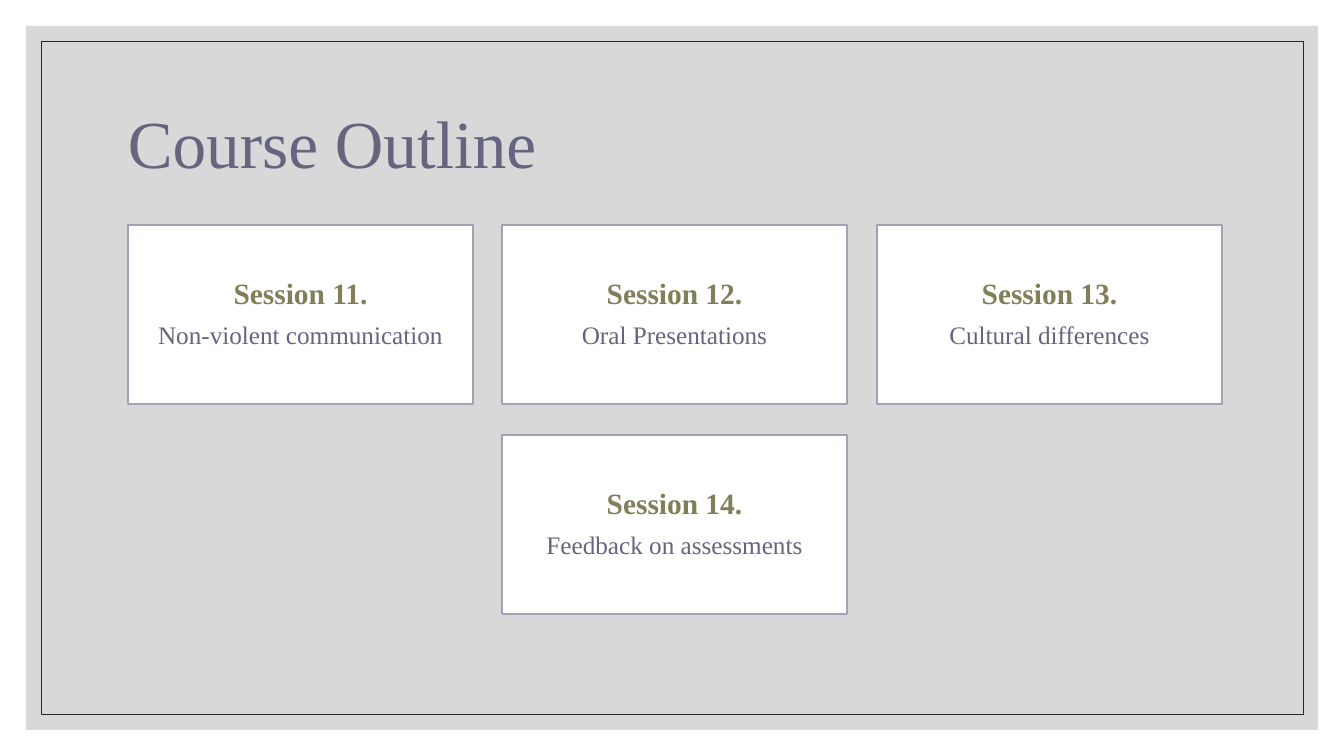
from pptx import Presentation
from pptx.dml.color import RGBColor
from pptx.enum.shapes import MSO_SHAPE
from pptx.enum.text import MSO_ANCHOR, PP_ALIGN
from pptx.oxml.ns import qn
from pptx.util import Emu, Pt
from lxml import etree

RECTANGLE = MSO_SHAPE.RECTANGLE
MIDDLE = MSO_ANCHOR.MIDDLE
LEFT, CENTER = PP_ALIGN.LEFT, PP_ALIGN.CENTER
WHITE = RGBColor(0xFF, 0xFF, 0xFF)
GRAY = RGBColor(0xBF, 0xBF, 0xBF)
BLACK = RGBColor(0x26, 0x26, 0x26)
LAVENDER = RGBColor(0xA2, 0xA2, 0xB5)
SLATE = RGBColor(0x65, 0x65, 0x80)
OLIVE = RGBColor(0x81, 0x7E, 0x59)
FONT = "Times New Roman"

CARD_LEFT, CARD_TOP = 128, 225
CARD_WIDTH, CARD_HEIGHT = 345, 179
CARD_SPAN, ROW_PITCH = 749, 210
SESSIONS = [
    (0, 0, "Session 11.", "Non-violent communication"),
    (1, 0, "Session 12.", "Oral Presentations"),
    (2, 0, "Session 13.", "Cultural differences"),
    (1, 1, "Session 14.", "Feedback on assessments"),
]


def px(length):
    return Emu(round(length * 914400 / 100.8))


class OutlineSlide:
    def __init__(self, presentation):
        self.slide = presentation.slides.add_slide(presentation.slide_layouts[6])

    def rectangle(self, left, top, width, height, fill=None, line=None, weight=1, opacity=100):
        shape = self.slide.shapes.add_shape(RECTANGLE, px(left), px(top), px(width), px(height))
        shape.shadow.inherit = False
        if fill is None:
            shape.fill.background()
        else:
            shape.fill.solid()
            shape.fill.fore_color.rgb = fill
            if opacity < 100:
                color = shape.fill._xPr.find(".//" + qn("a:srgbClr"))
                etree.SubElement(color, qn("a:alpha"), val=str(opacity * 1000))
        if line is None:
            shape.line.fill.background()
        else:
            shape.line.color.rgb = line
            shape.line.width = Pt(weight)
        return shape

    def paragraph(self, paragraph, text, size, color, bold=False, align=LEFT, after=0):
        paragraph.alignment = align
        paragraph.line_spacing = 0.9
        paragraph.space_after = Pt(after)
        run = paragraph.add_run()
        run.text = text
        run.font.name = FONT
        run.font.size = Pt(size)
        run.font.bold = bold
        run.font.color.rgb = color

    def title(self, text, left, top, width, height):
        frame = self.slide.shapes.add_textbox(px(left), px(top), px(width), px(height)).text_frame
        frame.word_wrap = True
        frame.vertical_anchor = MIDDLE
        self.paragraph(frame.paragraphs[0], text, 48, SLATE)

    def card(self, left, top, heading, topic):
        frame = self.rectangle(left, top, CARD_WIDTH, CARD_HEIGHT, WHITE, LAVENDER).text_frame
        frame.word_wrap = True
        frame.vertical_anchor = MIDDLE
        frame.margin_left = frame.margin_right = px(8)
        frame.margin_top = frame.margin_bottom = px(9)
        self.paragraph(frame.paragraphs[0], heading, 21, OLIVE, True, CENTER, 8)
        self.paragraph(frame.add_paragraph(), topic, 18, SLATE, False, CENTER)


def main():
    presentation = Presentation()
    presentation.slide_width = px(1344)
    presentation.slide_height = px(756)
    outline = OutlineSlide(presentation)
    outline.rectangle(26, 26, 1292, 704, fill=GRAY, opacity=60)
    outline.rectangle(41, 41, 1262, 673, line=BLACK, weight=0.5)
    outline.title("Course Outline", 118, 71, 1109, 151)
    for column, row, heading, topic in SESSIONS:
        left = CARD_LEFT + column * CARD_SPAN // 2
        outline.card(left, CARD_TOP + row * ROW_PITCH, heading, topic)
    presentation.save("out.pptx")


if __name__ == "__main__":
    main()
